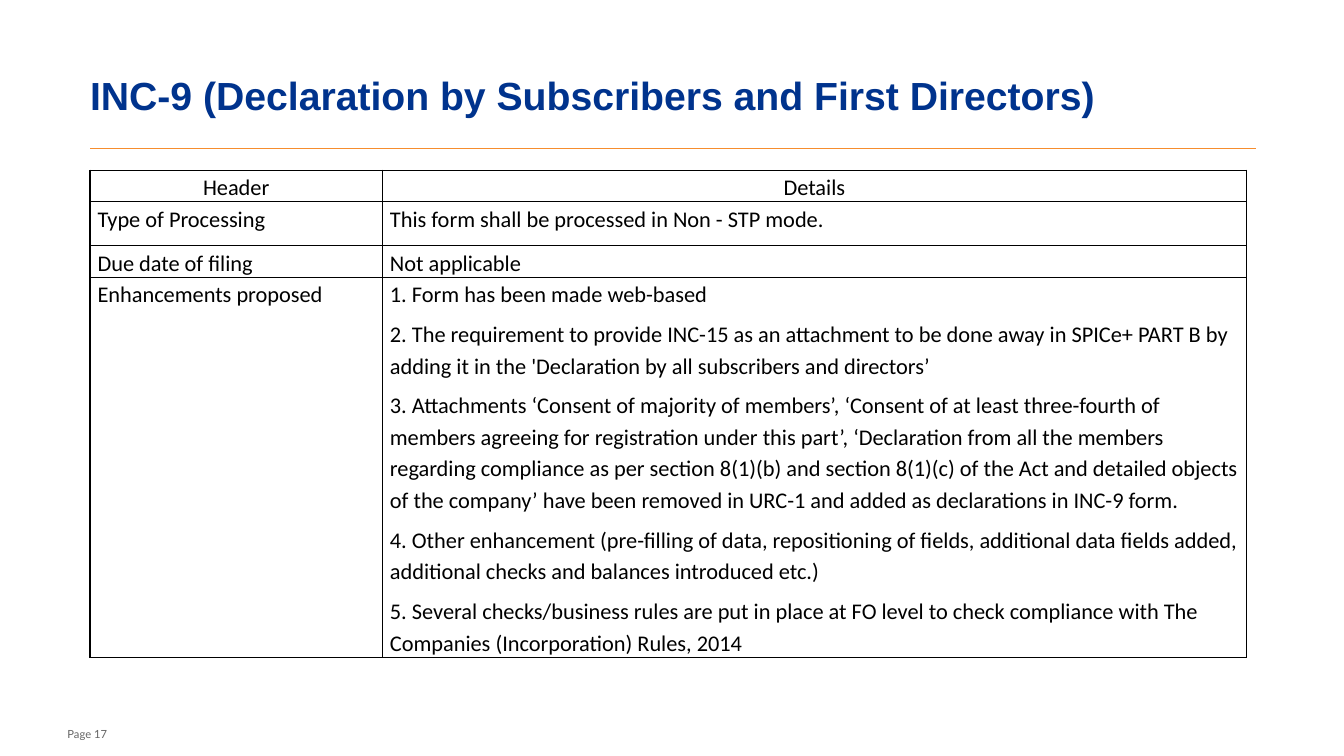
"""Builds the INC-9 slide with its table of form details."""
from lxml import etree
from pptx import Presentation
from pptx import util as u
from pptx.dml.color import RGBColor
from pptx.enum import shapes, text
from pptx.oxml import ns


def tint(code):
    return RGBColor.from_string(code)


def style(part, align, **look):
    part.alignment = align
    part.font.color.rgb = tint(look.pop("color"))
    for key, val in look.items():
        setattr(part.font, key, val)


left, mid = text.PP_ALIGN.LEFT, text.PP_ALIGN.CENTER
flush = dict.fromkeys(
    ("margin_left", "margin_right", "margin_top", "margin_bottom"), 0)
pad = {**flush, "margin_left": u.Cm(0.19), "margin_right": u.Cm(0.19)}
rows = [
    ("Header", ["Details"]),
    ("Type of Processing", ["This form shall be processed in Non - STP mode."]),
    ("Due date of filing", ["Not applicable"]),
    ("Enhancements proposed", [
        "1. Form has been made web-based",
        "2. The requirement to provide INC-15 as an attachment to be done away "
        "in SPICe+ PART B by adding it in the 'Declaration by all subscribers "
        "and directors’",
        "3. Attachments ‘Consent of majority of members’, ‘Consent of at least "
        "three-fourth of members agreeing for registration under this part’, "
        "‘Declaration from all the members regarding compliance as per section "
        "8(1)(b) and section 8(1)(c) of the Act and detailed objects of the "
        "company’ have been removed in URC-1 and added as declarations in "
        "INC-9 form.",
        "4. Other enhancement (pre-filling of data, repositioning of fields, "
        "additional data fields added, additional checks and balances "
        "introduced etc.)",
        "5. Several checks/business rules are put in place at FO level to check "
        "compliance with The Companies (Incorporation) Rules, 2014",
    ]),
]
widths = [7.37, 21.78]
heights = [0.79, 1.11, 0.79, 9.58]
edge = 2.27

deck = Presentation()
deck.slide_width, deck.slide_height = u.Cm(33.88), u.Cm(19.05)
slide = deck.slides.add_slide(deck.slide_layouts[5])

title = slide.shapes.title
title.left, title.top = u.Cm(edge), u.Cm(1.02)
title.width, title.height = u.Cm(29.31), u.Cm(2.72)
title.text_frame.text = "INC-9 (Declaration by Subscribers and First Directors)"
page = slide.shapes.add_textbox(u.Cm(1.7), u.Cm(18.11), u.Cm(2.46), u.Cm(0.56))
page.text_frame.text = "Page 17"
for box, anchor in ((title, "MIDDLE"), (page, "BOTTOM")):
    frame = {**flush, "word_wrap": True, "auto_size": text.MSO_AUTO_SIZE.NONE,
             "vertical_anchor": text.MSO_ANCHOR[anchor]}
    for key, val in frame.items():
        setattr(box.text_frame, key, val)
style(title.text_frame.paragraphs[0], left,
      name="Arial", size=u.Pt(28), bold=True, color="00338D")
style(page.text_frame.paragraphs[0], left,
      name="Lato", size=u.Pt(8), color="646464")

rule = slide.shapes.add_connector(
    shapes.MSO_CONNECTOR.STRAIGHT, u.Cm(edge), u.Cm(3.74), u.Cm(31.65), u.Cm(3.74))
rule.line.color.rgb = tint("F68D2E")
rule.line.width = u.Pt(1)
etree.SubElement(rule.element.spPr, ns.qn("a:effectLst"))

grid = slide.shapes.add_table(
    len(rows), len(widths), u.Cm(edge), u.Cm(4.29),
    u.Cm(sum(widths)), u.Cm(sum(heights))).table
grid.first_row = grid.horz_banding = False
for col, width in zip(grid.columns, widths):
    col.width = u.Cm(width)
for row, height, (head, notes) in zip(grid.rows, heights, rows):
    row.height = u.Cm(height)
    for cell, lines in zip(row.cells, ([head], notes)):
        for key, val in pad.items():
            setattr(cell, key, val)
        cell.fill.background()
        cell.text_frame.text = "\n".join(lines)
        for num, para in enumerate(cell.text_frame.paragraphs):
            para.line_spacing = 1.15
            para.space_before = u.Pt(6 if num else 0)
            style(para, mid if head == "Header" else left,
                  name="Calibri", size=u.Pt(16), color="000000")
        props = cell._tc.get_or_add_tcPr()
        for spot, side in enumerate("LRTB"):
            line = etree.Element(ns.qn("a:ln" + side), w=str(u.Pt(1)))
            fill = etree.SubElement(line, ns.qn("a:solidFill"))
            etree.SubElement(fill, ns.qn("a:srgbClr"), val="000000")
            props.insert(spot, line)

deck.save("out.pptx")
